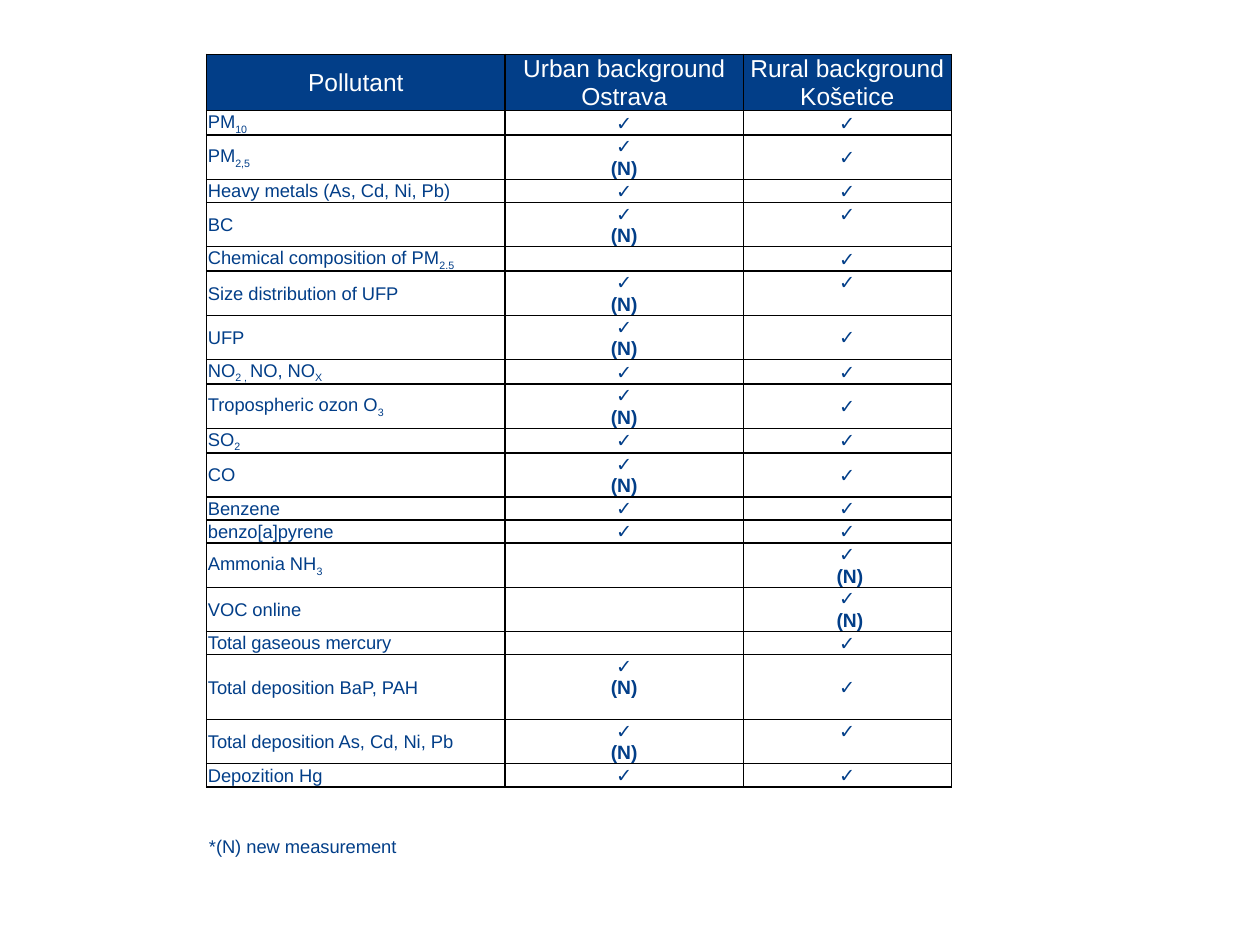
import pptx
import pptx.util
from lxml import etree
from pptx.dml.color import RGBColor
from pptx.enum.text import MSO_ANCHOR, MSO_AUTO_SIZE, PP_ALIGN
from pptx.oxml.ns import qn

Pt = pptx.util.Pt
HUES = {"navy": "023E88", "white": "FFFFFF", "line": "000000"}
FACE = "Arial"

HEAD = ["Pollutant", "Urban background Ostrava", "Rural background Košetice"]
MARKS = {"": "", "yes": "✓", "new": "✓\n(N)", "late": "✓\n (N)"}
# Pollutant (subscripts between underscores), urban mark, rural mark;
# "^" puts the mark at the top of its cell
ROWS = [
    ("PM_10_", "yes", "yes"),
    ("PM_2,5_", "new", "yes"),
    ("Heavy metals (As, Cd, Ni, Pb)", "yes", "yes"),
    ("BC", "new", "^yes"),
    ("Chemical composition of PM_2.5_", "", "yes"),
    ("Size distribution of UFP", "new", "^yes"),
    ("UFP", "new", "yes"),
    ("NO_2 , _NO, NO_X_", "yes", "yes"),
    ("Tropospheric ozon O_3_", "new", "yes"),
    ("SO_2_", "yes", "yes"),
    ("CO", "new", "yes"),
    ("Benzene", "yes", "yes"),
    ("benzo[a]pyrene", "yes", "yes"),
    ("Ammonia NH_3_", "", "late"),
    ("VOC online", "", "late"),
    ("Total gaseous mercury", "", "yes"),
    ("Total deposition BaP, PAH", "^new", "yes"),
    ("Total deposition As, Cd, Ni, Pb", "new", "^yes"),
    ("Depozition Hg", "yes", "yes"),
]
WIDTHS = [170.6, 136.1, 118.8]


def style(para, size, hue, bold=False):
    font = para.font
    font.name, font.size, font.bold = FACE, Pt(size), bold
    font.color.rgb = RGBColor.from_string(HUES[hue])


def write(para, text):
    """Add runs, lowering every part that stands between underscores."""
    for num, part in enumerate(text.split("_")):
        if part:
            run = para.add_run()
            run.text = part
            if num % 2:
                run._r.get_or_add_rPr().set("baseline", "-25000")


def border(cell):
    props = cell._tc.get_or_add_tcPr()
    for side in ("a:lnL", "a:lnR", "a:lnT", "a:lnB"):
        line = etree.SubElement(props, qn(side), w=str(Pt(1)))
        fill = etree.SubElement(line, qn("a:solidFill"))
        etree.SubElement(fill, qn("a:srgbClr"), val=HUES["line"])


def fill_cell(cell, text, size, hue, bold=False, mid=True, back=None):
    border(cell)
    cell.margin_left = cell.margin_right = cell.margin_top = Pt(0.72)
    cell.margin_bottom = 0
    cell.vertical_anchor = MSO_ANCHOR.MIDDLE
    if back:
        cell.fill.solid()
        cell.fill.fore_color.rgb = RGBColor.from_string(HUES[back])
    else:
        cell.fill.background()
    frame = cell.text_frame
    for num, line in enumerate(text.split("\n")):
        para = frame.add_paragraph() if num else frame.paragraphs[0]
        para.alignment = PP_ALIGN.CENTER if mid else PP_ALIGN.LEFT
        style(para, size, hue, bold)
        write(para, line)
        if not line:  # keeps an empty cell as low as its row
            etree.SubElement(para._p, qn("a:endParaRPr"), sz=str(size * 100))


def row_height(name, urban, rural):
    if urban == "^new":
        return 37.2
    if "new" in urban or rural == "late":
        return 25.2
    return 14 if "_" in name else 13.2


def add_grid(slide, left, top):
    highs = [32] + [row_height(*row) for row in ROWS]
    grid = slide.shapes.add_table(
        len(highs), len(WIDTHS), Pt(left), Pt(top), Pt(sum(WIDTHS)), Pt(sum(highs))
    ).table
    grid.horz_banding = False
    for col, width in zip(grid.columns, WIDTHS):
        col.width = Pt(width)
    for row, high in zip(grid.rows, highs):
        row.height = Pt(high)

    # Header
    for col, text in enumerate(HEAD):
        fill_cell(grid.cell(0, col), text, 14, "white", back="navy")

    # Pollutants and their marks
    for num, (name, *marks) in enumerate(ROWS, 1):
        fill_cell(grid.cell(num, 0), name, 10.5, "navy", mid=False)
        for col, mark in enumerate(marks, 1):
            cell = grid.cell(num, col)
            fill_cell(cell, MARKS[mark.lstrip("^")], 11, "navy", bold=True)
            if mark.startswith("^"):
                cell.vertical_anchor = MSO_ANCHOR.TOP


def add_note(slide, left, top, width, height):
    frame = slide.shapes.add_textbox(
        Pt(left), Pt(top), Pt(width), Pt(height)
    ).text_frame
    frame.word_wrap = False
    frame.auto_size = MSO_AUTO_SIZE.SHAPE_TO_FIT_TEXT
    para = frame.paragraphs[0]
    style(para, 10.5, "navy")
    write(para, "*(N) new measurement")


def main():
    deck = pptx.Presentation()
    deck.slide_width, deck.slide_height = Pt(720), Pt(540)
    slide = deck.slides.add_slide(deck.slide_layouts[6])
    add_grid(slide, 118.1, 31)
    add_note(slide, 112.3, 473.8, 128.2, 20.9)
    deck.save("out.pptx")


if __name__ == "__main__":
    main()
